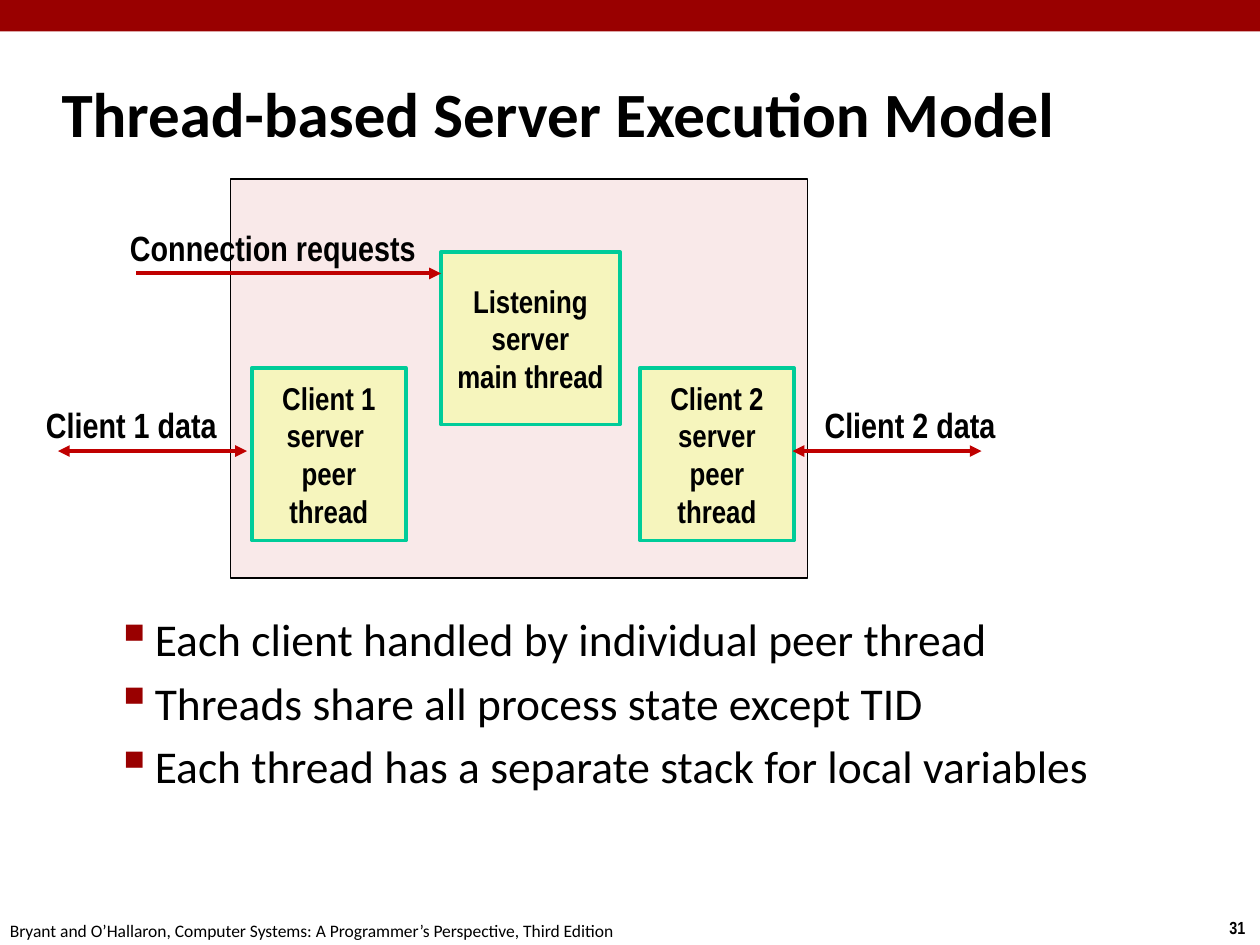
"""Build the thread-based server execution model slide."""
from lxml import etree
from pptx import Presentation, util as u
from pptx.dml.color import RGBColor
from pptx.enum import shapes, text
from pptx.oxml import ns

BLACK = RGBColor(0, 0, 0)
CRIMSON = RGBColor(0x99, 0x00, 0x00)
PINK = RGBColor(0xF1, 0xC7, 0xC7)
CREAM = RGBColor(0xF6, 0xF5, 0xBD)
GREEN = RGBColor(0x00, 0xCC, 0x99)
RED = RGBColor(0xC0, 0x00, 0x00)
LEFT, CENTER, RIGHT = text.PP_ALIGN.LEFT, text.PP_ALIGN.CENTER, text.PP_ALIGN.RIGHT
TOP, MIDDLE = text.MSO_ANCHOR.TOP, text.MSO_ANCHOR.MIDDLE
RECTANGLE = shapes.MSO_SHAPE.RECTANGLE


def write(box, lines, font, align=LEFT, anchor=TOP, wrap=False):
    frame = box.text_frame
    for name, value in {"word_wrap": wrap, "vertical_anchor": anchor}.items():
        setattr(frame, name, value)
    for index, line in enumerate(lines):
        para = frame.add_paragraph() if index else frame.paragraphs[0]
        para.alignment = align
        span = para.add_run()
        span.text = line
        span.font.color.rgb = BLACK
        for name, value in font.items():
            setattr(span.font, name, value)
    return frame.paragraphs


def rectangle(place, fill, line=None, width=1):
    box = page.shapes.add_shape(RECTANGLE, *map(u.Inches, place))
    box.shadow.inherit = False
    box.fill.solid()
    box.fill.fore_color.rgb = fill
    if line is None:
        box.line.fill.background()
    else:
        box.line.color.rgb = line
        box.line.width = u.Pt(width)
    return box


deck = Presentation()
deck.slide_width, deck.slide_height = u.Inches(10), u.Inches(7.5)
page = deck.slides.add_slide(deck.slide_layouts[6])

NARROW = {"name": "Arial Narrow", "bold": True}
NUMBER_FONT = {**NARROW, "size": u.Pt(10)}
THREAD_FONT = {**NARROW, "size": u.Pt(18)}
LABEL_FONT = {**NARROW, "size": u.Pt(20)}
FOOTER_FONT = {"name": "Calibri", "size": u.Pt(10)}
TITLE_FONT = {"name": "Calibri", "size": u.Pt(36), "bold": True}
BODY_FONT = {"name": "Calibri", "size": u.Pt(26)}

rectangle((0, 0, 10, 0.25), CRIMSON)
process = rectangle((1.83, 1.42, 4.58, 3.17), PINK, BLACK)
tint = process.fill._xPr.find(".//" + ns.qn("a:srgbClr"))
etree.SubElement(tint, ns.qn("a:alpha"), val="38000")

threads = [
    (2, 2.92, 1.22, ["Client 1", "server ", "peer", "thread"]),
    (5.08, 2.92, 1.22, ["Client 2", "server", "peer", "thread"]),
    (3.5, 2, 1.42, ["Listening", "server", "main thread"]),
]
for left, top, width, lines in threads:
    thread = rectangle((left, top, width, 1.37), CREAM, GREEN, 2.25)
    write(thread, lines, THREAD_FONT, CENTER, MIDDLE)

arrows = [
    (1.08, 3.5, 2.17, ["tailEnd"]),
    (0.46, 1.96, 3.58, ["headEnd", "tailEnd"]),
    (7.79, 6.29, 3.58, ["headEnd", "tailEnd"]),
]
for start, end, height, tips in arrows:
    arrow = page.shapes.add_connector(
        shapes.MSO_CONNECTOR.STRAIGHT,
        u.Inches(start), u.Inches(height), u.Inches(end), u.Inches(height))
    arrow.line.color.rgb = RED
    arrow.line.width = u.Pt(2.25)
    for tip in tips:
        etree.SubElement(arrow.line._get_or_add_ln(), ns.qn("a:" + tip), type="triangle")
    etree.SubElement(arrow._element.spPr, ns.qn("a:effectLst"))

captions = [
    ((0.91, 1.75, 2.49, 0.44), "Connection requests", LABEL_FONT, RIGHT, TOP),
    ((0.25, 3.15, 1.57, 0.44), "Client 1 data", LABEL_FONT, RIGHT, TOP),
    ((6.43, 3.15, 1.57, 0.44), "Client 2 data", LABEL_FONT, RIGHT, TOP),
    ((0.39, 0.48, 8.3, 0.83), "Thread-based Server Execution Model", TITLE_FONT, LEFT, MIDDLE),
    ((9.66, 7.23, 0.34, 0.27), "31", NUMBER_FONT, LEFT, TOP),
    ((-0.02, 7.25, 5.08, 0.27),
     "Bryant and O’Hallaron, Computer Systems: A Programmer’s Perspective, Third Edition",
     FOOTER_FONT, LEFT, TOP),
]
for place, caption, font, align, anchor in captions:
    box = page.shapes.add_textbox(*map(u.Inches, place))
    write(box, [caption], font, align, anchor, wrap=font is TITLE_FONT)

points = [
    "Each client handled by individual peer thread",
    "Threads share all process state except TID",
    "Each thread has a separate stack for local variables",
]
body = page.shapes.add_textbox(*map(u.Inches, (0.32, 4.8, 9.09, 2.22)))
for para in write(body, points, BODY_FONT, wrap=True):
    para.space_before = u.Pt(5.2)
    layout = para._p.get_or_add_pPr()
    layout.set("marL", str(u.Inches(0.81)))
    layout.set("indent", str(u.Inches(-0.31)))
    colour = etree.SubElement(layout, ns.qn("a:buClr"))
    etree.SubElement(colour, ns.qn("a:srgbClr"), val=str(CRIMSON))
    etree.SubElement(layout, ns.qn("a:buSzPct"), val="110000")
    etree.SubElement(layout, ns.qn("a:buChar"), char="▪")

deck.save("out.pptx")
